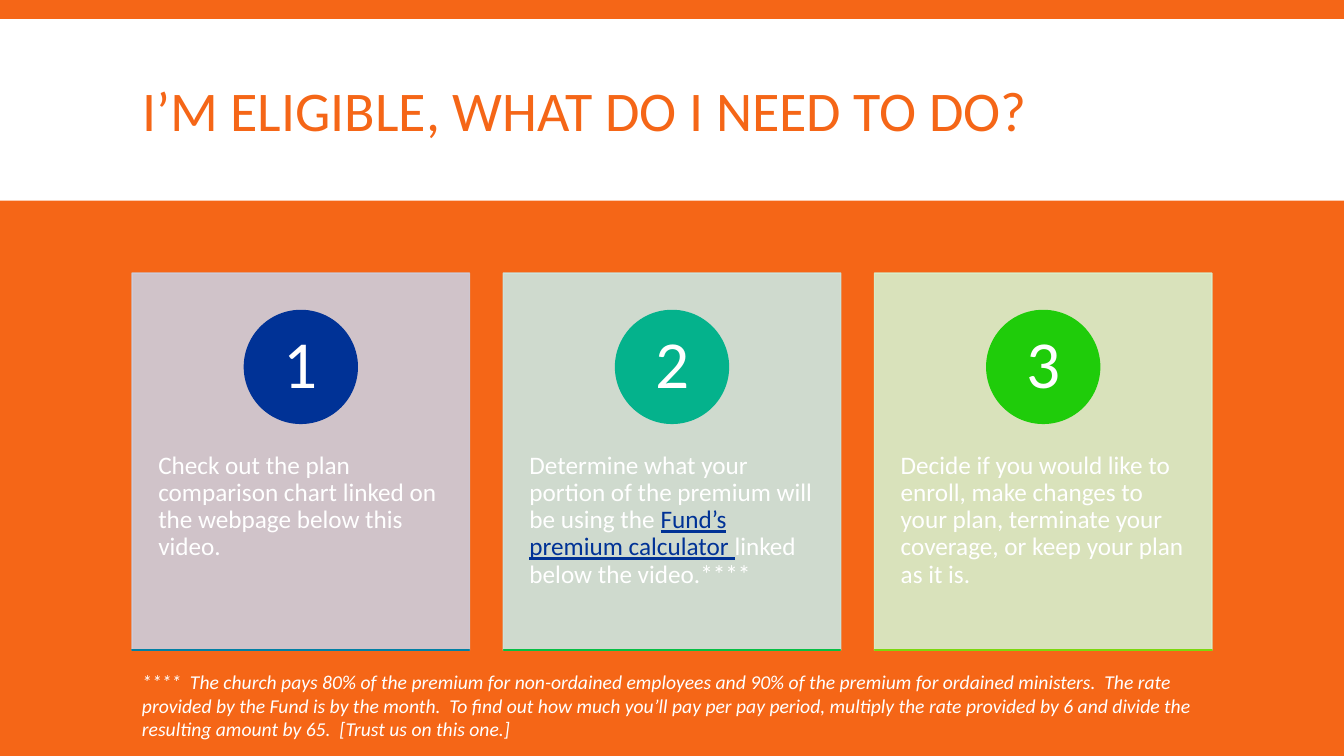
from dataclasses import dataclass
from lxml.etree import SubElement
from pptx import Presentation
from pptx.dml.color import RGBColor
from pptx.enum.shapes import MSO_SHAPE
from pptx.enum.text import MSO_ANCHOR, MSO_AUTO_SIZE, PP_ALIGN
from pptx.oxml.ns import qn
from pptx.util import Inches, Pt


@dataclass(frozen=True)
class Theme:
    font: str = "Calibri"
    orange: str = "F56617"
    white: str = "FFFFFF"
    link: str = "003296"
    title: int = 40
    number: int = 48
    body: int = 18
    note: int = 14


theme = Theme()


def add_block(shapes, kind, frame, color, outlined=True, opacity=100):
    block = shapes.add_shape(kind, *map(Inches, frame))
    block.shadow.inherit = False
    block.fill.solid()
    block.fill.fore_color.rgb = RGBColor.from_string(color)
    if outlined:
        block.line.color.rgb = RGBColor.from_string(color)
        block.line.width = Pt(1)
    else:
        block.line.fill.background()
    if opacity < 100:
        for tint in block.element.spPr.iter(qn("a:srgbClr")):
            SubElement(tint, qn("a:alpha"), val=str(opacity * 1000))
    return block


def write_text(box, runs, size, spacing=1.0, align=PP_ALIGN.LEFT,
               anchor=MSO_ANCHOR.TOP, insets=(0.1, 0.05), italic=False):
    frame = box.text_frame
    frame.word_wrap = True
    frame.auto_size = MSO_AUTO_SIZE.NONE
    frame.vertical_anchor = anchor
    frame.margin_left = frame.margin_right = Inches(insets[0])
    frame.margin_top = frame.margin_bottom = Inches(insets[1])
    para = frame.paragraphs[0]
    para.alignment = align
    para.line_spacing = spacing
    for text, color in runs:
        span = para.add_run()
        span.text = text
        span.font.name = theme.font
        span.font.size = Pt(size)
        span.font.italic = italic
        span.font.underline = color == theme.link
        span.font.color.rgb = RGBColor.from_string(color)


wide, high = 13.33, 7.5
left, content = 1.31, 10.71
card_width, pitch = content * 5 / 16, content * 11 / 32
card_top, card_height = 2.71, 3.74
circle, number = 1.12, 0.79
circle_top = 3.08

deck = Presentation()
deck.slide_width, deck.slide_height = Inches(wide), Inches(high)
page = deck.slides.add_slide(deck.slide_layouts[5])
page.background.fill.solid()
page.background.fill.fore_color.rgb = RGBColor.from_string(theme.orange)

title = page.shapes.title
title.left, title.top = Inches(left), Inches(0.31)
title.width, title.height = Inches(content), Inches(1.65)
write_text(title, [("I’M ELIGIBLE, WHAT DO I NEED TO DO?", theme.orange)],
           theme.title, spacing=0.85, anchor=MSO_ANCHOR.MIDDLE)
band = add_block(page.shapes, MSO_SHAPE.RECTANGLE, (0, 0.19, wide, 1.8),
                 theme.white, outlined=False)
title.element.addprevious(band.element)

steps = [
    ("CCCEDD", "003296", "0280A4", [
        ("Check out the plan comparison chart linked on the webpage below this video.", theme.white)]),
    ("CBE7E2", "04B28C", "07BF45", [
        ("Determine what your portion of the premium will be using the ", theme.white),
        ("Fund’s premium calculator ", theme.link),
        ("linked below the video.****", theme.white)]),
    ("D7F0CD", "1FCC0A", "7DD80E", [
        ("Decide if you would like to enroll, make changes to your plan, terminate your "
         "coverage, or keep your plan as it is.", theme.white)]),
]

cards = page.shapes.add_group_shape().shapes
for index, (card_color, circle_color, base_color, runs) in enumerate(steps):
    card_left = left + index * pitch
    middle = card_left + card_width / 2
    add_block(cards, MSO_SHAPE.RECTANGLE,
              (card_left, card_top, card_width, card_height), card_color, opacity=90)
    body = cards.add_textbox(*map(Inches, (card_left, 4.13, card_width, 2.24)))
    write_text(body, runs, theme.body, spacing=0.9, insets=(0.26, 0.36))
    add_block(cards, MSO_SHAPE.OVAL,
              (middle - circle / 2, circle_top, circle, circle), circle_color)
    label = cards.add_textbox(*map(Inches, (
        middle - number / 2, circle_top + (circle - number) / 2, number, number)))
    write_text(label, [(str(index + 1), theme.white)], theme.number, spacing=0.9,
               align=PP_ALIGN.CENTER, anchor=MSO_ANCHOR.MIDDLE, insets=(0.09, 0.01))
    add_block(cards, MSO_SHAPE.RECTANGLE,
              (card_left, card_top + card_height, card_width, 0), base_color)

note = page.shapes.add_textbox(*map(Inches, (left, 6.6, content, 0.81)))
write_text(note, [(
    "****  The church pays 80% of the premium for non-ordained employees and 90% of the "
    "premium for ordained ministers.  The rate provided by the Fund is by the month.  To find "
    "out how much you’ll pay per pay period, multiply the rate provided by 6 and divide the "
    "resulting amount by 65.  [Trust us on this one.]", theme.white)], theme.note, italic=True)

deck.save("out.pptx")
